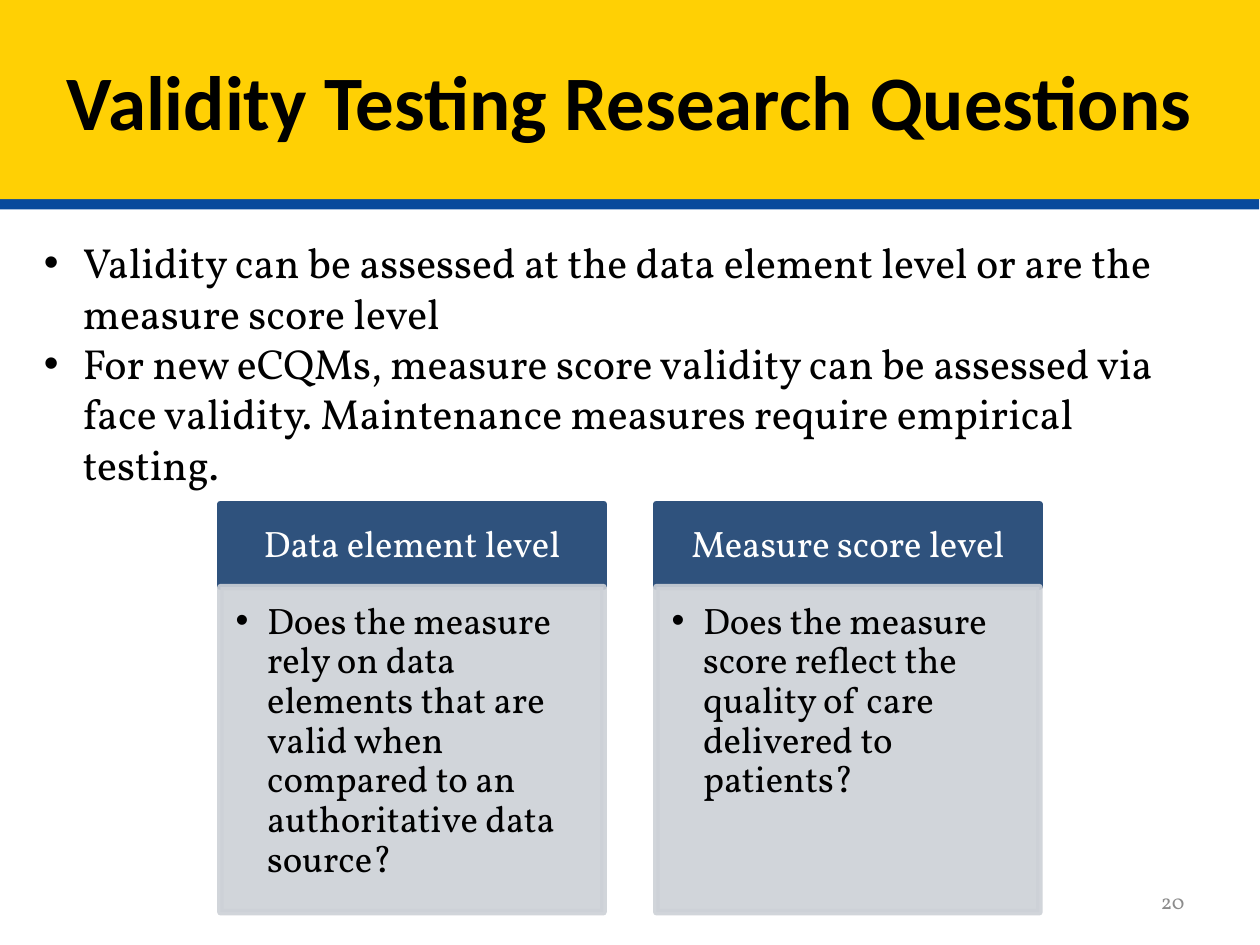
"""Build the slide on validity testing research questions."""
from lxml.etree import SubElement
from pptx import Presentation
from pptx.dml.color import RGBColor
from pptx.enum.shapes import MSO_SHAPE as Preset
from pptx.enum.text import MSO_ANCHOR as Anchor, PP_ALIGN as Align
from pptx.oxml.ns import qn
from pptx.util import Inches, Pt

YELLOW = RGBColor(0xFF, 0xD0, 0x04)
BLUE = RGBColor(0x08, 0x4A, 0x9C)
NAVY = RGBColor(0x2F, 0x52, 0x7D)
PALE = RGBColor(0xCD, 0xD1, 0xD7)
GRAY = RGBColor(0x8C, 0x8C, 0x8C)
BLACK = RGBColor(0, 0, 0)
WHITE = RGBColor(0xFF, 0xFF, 0xFF)

TITLE = "Validity Testing Research Questions"
POINTS = [
    "Validity can be assessed at the data element level or are the measure score level",
    "For new eCQMs, measure score validity can be assessed via face validity. "
    "Maintenance measures require empirical testing.",
]
LEVELS = [
    ("Data element level",
     "Does the measure rely on data elements that are valid when compared "
     "to an authoritative data source?"),
    ("Measure score level",
     "Does the measure score reflect the quality of care delivered to patients?"),
]
PAGE = "20"

CARD_LEFT, CARD_TOP, CARD_WIDTH, CARD_STEP = 1.75, 4, 3.04, 3.46
HEADER_HEIGHT, QUESTION_HEIGHT = 0.66, 2.58

TITLE_FONT = {"name": "Calibri", "size": Pt(44), "bold": True}
POINT_FONT = {"name": "Vollkorn", "size": Pt(24)}
CARD_FONT = {"name": "Vollkorn", "size": Pt(21)}
PAGE_FONT = {"name": "Vollkorn", "size": Pt(12)}


def write(shape, lines, font, color, align=Align.LEFT, anchor=Anchor.TOP,
          insets=(0.1, 0.05, 0.1, 0.05), spacing=None, indent=None):
    frame = shape.text_frame
    sides = ("margin_left", "margin_top", "margin_right", "margin_bottom")
    layout = dict(zip(sides, map(Inches, insets)), word_wrap=True, vertical_anchor=anchor)
    for key, value in layout.items():
        setattr(frame, key, value)
    for index, line in enumerate(lines):
        paragraph = frame.add_paragraph() if index else frame.paragraphs[0]
        paragraph.alignment = align
        paragraph.line_spacing = spacing
        if indent:
            properties = paragraph._p.get_or_add_pPr()
            properties.set("marL", str(Inches(indent)))
            properties.set("indent", str(-Inches(indent)))
            SubElement(properties, qn("a:buFont"), typeface="Arial")
            SubElement(properties, qn("a:buChar"), char="•")
        run = paragraph.add_run()
        run.text = line
        run.font.color.rgb = color
        for key, value in font.items():
            setattr(run.font, key, value)


def add_panel(slide, box, color, outlined=True, opacity=100):
    panel = slide.shapes.add_shape(Preset.RECTANGLE, *map(Inches, box))
    panel.shadow.inherit = False
    panel.fill.solid()
    panel.fill.fore_color.rgb = color
    if outlined:
        panel.line.color.rgb = color
        panel.line.width = Pt(3.78)
    else:
        panel.line.fill.background()
    if opacity < 100:
        for tone in panel._element.spPr.iter(qn("a:srgbClr")):
            SubElement(tone, qn("a:alpha"), val=str(opacity * 1000))
    return panel


def add_card(slide, left, header, question):
    top = add_panel(slide, (left, CARD_TOP, CARD_WIDTH, HEADER_HEIGHT), NAVY)
    write(top, [header], CARD_FONT, WHITE, Align.CENTER, Anchor.MIDDLE,
          (0.16, 0.09, 0.16, 0.09), 0.9)
    body = add_panel(slide, (left, CARD_TOP + HEADER_HEIGHT, CARD_WIDTH, QUESTION_HEIGHT),
                     PALE, opacity=90)
    write(body, [question], CARD_FONT, BLACK, insets=(0.12, 0.12, 0.16, 0.18),
          spacing=0.9, indent=0.25)


def add_title(slide):
    banner = add_panel(slide, (0, 0, 10, 1.58), YELLOW, outlined=False)
    effects = banner._element.spPr.find(qn("a:effectLst"))
    shadow = SubElement(effects, qn("a:outerShdw"), blurRad="0", dist=str(Pt(6)),
                        dir=str(94 * 60000), algn="t", rotWithShape="0")
    SubElement(shadow, qn("a:srgbClr"), val=str(BLUE))
    write(banner, [TITLE], TITLE_FONT, BLACK, Align.CENTER, Anchor.MIDDLE)


def main():
    deck = Presentation()
    deck.slide_width, deck.slide_height = Inches(10), Inches(7.5)
    slide = deck.slides.add_slide(deck.slide_layouts[6])
    page = slide.shapes.add_textbox(*map(Inches, (7.17, 6.95, 2.33, 0.4)))
    write(page, [PAGE], PAGE_FONT, GRAY, Align.RIGHT, Anchor.MIDDLE)
    for column, (header, question) in enumerate(LEVELS):
        add_card(slide, CARD_LEFT + column * CARD_STEP, header, question)
    points = slide.shapes.add_textbox(*map(Inches, (0.25, 1.83, 9, 2.12)))
    write(points, POINTS, POINT_FONT, BLACK, indent=0.31)
    add_title(slide)
    deck.save("out.pptx")


if __name__ == "__main__":
    main()
